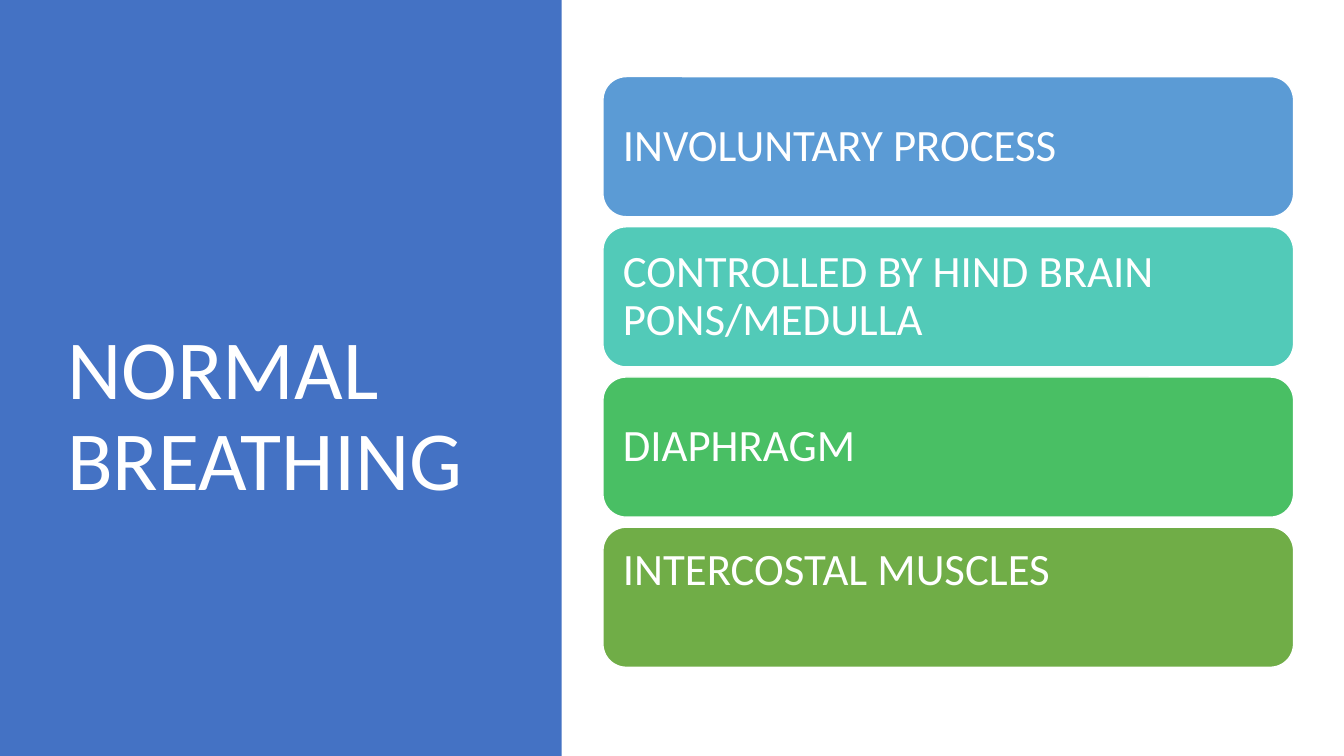
import pptx
import pptx.util
import pptx.dml.color
import pptx.enum.shapes
import pptx.enum.text

Inches = pptx.util.Inches
Pt = pptx.util.Pt
SHAPE = pptx.enum.shapes.MSO_SHAPE
WHITE = "FFFFFF"
LINE_HEIGHT = 0.52  # one line of card text, in inches

# label, fill, lines of room kept free below the label
CARDS = [
    ("INVOLUNTARY PROCESS", "5B9BD5", 0),
    ("CONTROLLED BY HIND BRAIN PONS/MEDULLA", "52CAB8", 0),
    ("DIAPHRAGM", "49BF64", 0),
    ("INTERCOSTAL MUSCLES", "70AD47", 1),
]


def color(hex_string):
    return pptx.dml.color.RGBColor.from_string(hex_string)


def add_block(slide, kind, left, top, width, height, fill, line=None):
    s = slide.shapes.add_shape(kind, Inches(left), Inches(top),
                               Inches(width), Inches(height))
    s.shadow.inherit = False
    s.fill.solid()
    s.fill.fore_color.rgb = color(fill)
    if line:
        s.line.color.rgb = color(line)
        s.line.width = Pt(1)
    else:
        s.line.fill.background()
    return s


def write(tf, text, size):
    tf.word_wrap = True
    tf.vertical_anchor = pptx.enum.text.MSO_ANCHOR.MIDDLE
    p = tf.paragraphs[0]
    p.text = text
    p.alignment = pptx.enum.text.PP_ALIGN.LEFT
    p.line_spacing = 0.9
    p.font.name = "Calibri"
    p.font.size = Pt(size)
    p.font.color.rgb = color(WHITE)


def add_title_panel(slide, left, top, width, height):
    add_block(slide, SHAPE.RECTANGLE, left, top, width, height, "4472C4")
    # The title sits a little below the middle of the panel
    box = slide.shapes.add_textbox(Inches(left + 0.57), Inches(top + 1.59),
                                   Inches(4.16), Inches(5.11))
    write(box.text_frame, "NORMAL BREATHING", 60)


def add_cards(slide, left, top, width, height, gap=0.1):
    card_height = (height - gap * (len(CARDS) - 1)) / len(CARDS)
    for i, (label, fill, free_lines) in enumerate(CARDS):
        s = add_block(slide, SHAPE.ROUNDED_RECTANGLE, left,
                      top + i * (card_height + gap), width, card_height,
                      fill, WHITE)
        tf = s.text_frame
        tf.margin_left = tf.margin_right = tf.margin_top = Inches(0.13)
        tf.margin_bottom = Inches(0.13 + free_lines * LINE_HEIGHT)
        write(tf, label, 32)


def main():
    prs = pptx.Presentation()
    prs.slide_width = Inches(13.33)
    prs.slide_height = Inches(7.5)
    slide = prs.slides.add_slide(prs.slide_layouts[6])
    add_title_panel(slide, 0, 0, 5.57, 7.5)
    add_cards(slide, 5.98, 0.76, 6.85, 5.86)
    prs.save("out.pptx")


if __name__ == "__main__":
    main()
